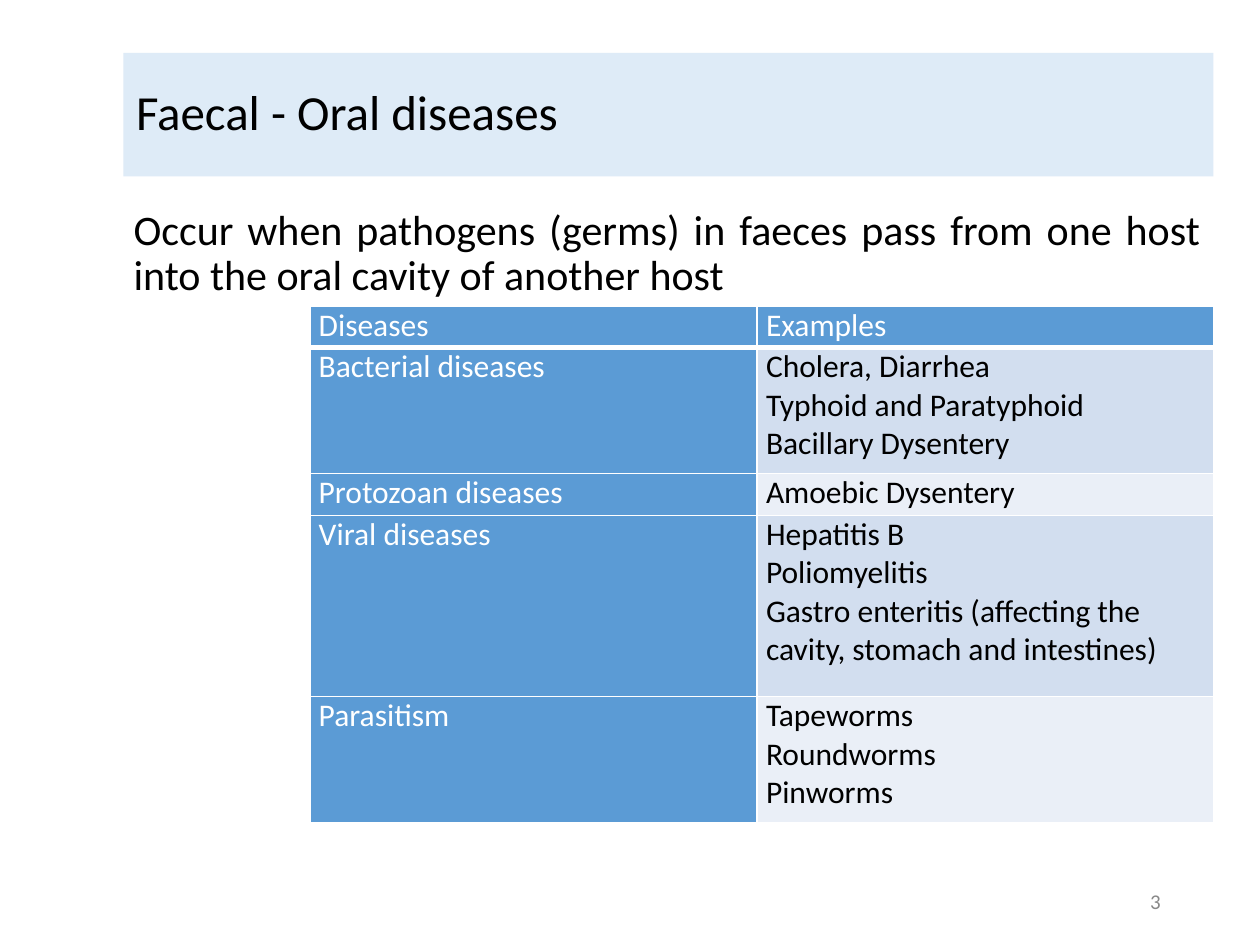
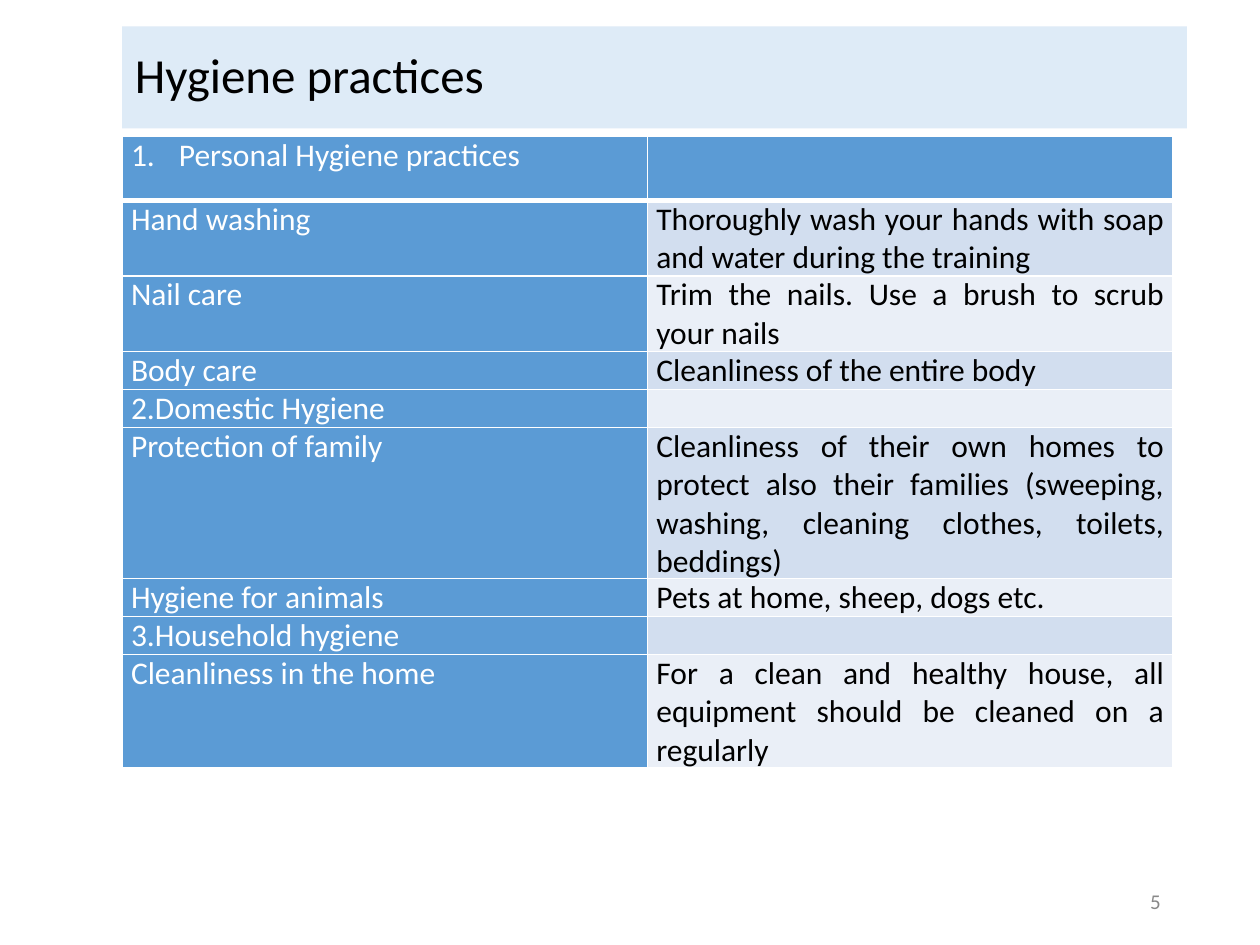
from lxml.etree import SubElement
from pptx import Presentation
from pptx.dml.color import RGBColor
from pptx.enum.text import MSO_ANCHOR, MSO_AUTO_SIZE, PP_ALIGN
from pptx.oxml.ns import qn
from pptx.util import Inches, Pt

BLACK, WHITE, GREY = "000000", "FFFFFF", "898989"
TITLE_BAND, TABLE_BLUE = "DEEBF7", "5B9BD5"
ROW_BANDS = ["EAEFF7", "D2DEEF"]
EDGES = ["a:lnL", "a:lnR", "a:lnT", "a:lnB"]


def color(hex_value):
    return RGBColor.from_string(hex_value)


def write(paragraph, text, size, hex_value, alignment):
    paragraph.alignment = alignment
    run = paragraph.add_run()
    run.text = text
    run.font.name = "Calibri"
    run.font.size = Pt(size)
    run.font.bold = False
    run.font.color.rgb = color(hex_value)


presentation = Presentation()
presentation.slide_width = Inches(10)
presentation.slide_height = Inches(7.5)
title_and_content = presentation.slide_layouts[1]
title_only = presentation.slide_layouts[5]

slides = [
    {
        "layout": title_and_content,
        "title": "Faecal - Oral diseases",
        "title_box": (0.98, 0.42, 8.65, 0.98),
        "intro": "Occur when pathogens (germs) in faeces pass from one host into the oral cavity of another host",
        "number": "3",
        "table_box": (2.46, 2.43, 7.17, 4.1),
        "columns": [3.55, 3.62],
        "alignment": PP_ALIGN.LEFT,
        "rows": [
            (0.33, "Diseases", ["Examples"]),
            (1, "Bacterial diseases", ["Cholera, Diarrhea", "Typhoid and Paratyphoid", "Bacillary Dysentery"]),
            (0.33, "Protozoan diseases", ["Amoebic Dysentery"]),
            (1.44, "Viral diseases", [
                "Hepatitis B",
                "Poliomyelitis",
                "Gastro enteritis (affecting the cavity, stomach and intestines)",
            ]),
            (1, "Parasitism", ["Tapeworms", "Roundworms", "Pinworms"]),
        ],
    },
    {
        "layout": title_only,
        "title": "Hygiene practices",
        "title_box": (0.97, 0.21, 8.45, 0.81),
        "number": "5",
        "table_box": (0.97, 1.08, 8.34, 5.01),
        "columns": [4.17, 4.17],
        "alignment": PP_ALIGN.JUSTIFY,
        "numbered_heading": True,
        "rows": [
            (0.51, "Personal Hygiene practices", []),
            (0.6, "Hand washing", ["Thoroughly wash your hands with soap and water during the training"]),
            (0.6, "Nail care", ["Trim the nails. Use a brush to scrub your nails"]),
            (0.3, "Body care", ["Cleanliness of the entire body"]),
            (0.3, "2.Domestic Hygiene", []),
            (1.2, "Protection of family", [
                "Cleanliness of their own homes to protect also their families "
                "(sweeping, washing, cleaning clothes, toilets, beddings)",
            ]),
            (0.3, "Hygiene for animals", ["Pets at home, sheep, dogs etc."]),
            (0.3, "3.Household hygiene", []),
            (0.9, "Cleanliness in the home", [
                "For a clean and healthy house, all equipment should be cleaned on a regularly",
            ]),
        ],
    },
]

for content in slides:
    slide = presentation.slides.add_slide(content["layout"])

    title = slide.shapes.title
    title.left, title.top, title.width, title.height = map(Inches, content["title_box"])
    title.fill.solid()
    title.fill.fore_color.rgb = color(TITLE_BAND)
    title.text_frame.auto_size = MSO_AUTO_SIZE.NONE
    title.text_frame.vertical_anchor = MSO_ANCHOR.MIDDLE
    paragraph = title.text_frame.paragraphs[0]
    paragraph.line_spacing = 0.9
    write(paragraph, content["title"], 28, BLACK, PP_ALIGN.LEFT)

    number = slide.shapes.add_textbox(Inches(7.06), Inches(6.95), Inches(2.25), Inches(0.4))
    number.text_frame.word_wrap = True
    number.text_frame.vertical_anchor = MSO_ANCHOR.MIDDLE
    write(number.text_frame.paragraphs[0], content["number"], 12, GREY, PP_ALIGN.RIGHT)

    if "intro" in content:
        body = slide.placeholders[1]
        body.left, body.top, body.width, body.height = map(Inches, (0.96, 1.61, 8.67, 4.67))
        body.text_frame.auto_size = MSO_AUTO_SIZE.NONE
        paragraph = body.text_frame.paragraphs[0]
        paragraph.line_spacing = 0.9
        paragraph.space_before = Pt(0)
        properties = paragraph._p.get_or_add_pPr()
        properties.set("marL", "0")
        properties.set("indent", "0")
        SubElement(properties, qn("a:buNone"))
        write(paragraph, content["intro"], 24, BLACK, PP_ALIGN.JUSTIFY)

    rows = content["rows"]
    table = slide.shapes.add_table(len(rows), 2, *map(Inches, content["table_box"])).table
    for column, width in zip(table.columns, content["columns"]):
        column.width = Inches(width)

    for row_index, (height, label, details) in enumerate(rows):
        table.rows[row_index].height = Inches(height)
        for column_index, lines in enumerate([[label], details]):
            cell = table.cell(row_index, column_index)
            cell.margin_left = cell.margin_right = Inches(0.07)
            cell.margin_top = cell.margin_bottom = 0
            heading = row_index == 0 or column_index == 0
            for edge in EDGES:
                width = 3 if row_index == 0 and edge == "a:lnB" else 1
                line = SubElement(cell._tc.get_or_add_tcPr(), qn(edge), w=str(Pt(width)))
                SubElement(SubElement(line, qn("a:solidFill")), qn("a:srgbClr"), val=WHITE)
            cell.fill.solid()
            cell.fill.fore_color.rgb = color(TABLE_BLUE if heading else ROW_BANDS[row_index % 2])
            for line_index, text in enumerate(lines):
                frame = cell.text_frame
                paragraph = frame.add_paragraph() if line_index else frame.paragraphs[0]
                write(paragraph, text, 18, WHITE if heading else BLACK, content["alignment"])
            if not lines:
                cell.text_frame.paragraphs[0].font.size = Pt(18)

    if content.get("numbered_heading"):
        properties = table.cell(0, 0).text_frame.paragraphs[0]._p.get_or_add_pPr()
        properties.set("marL", str(Inches(0.38)))
        properties.set("indent", str(-Inches(0.38)))
        SubElement(properties, qn("a:buFont"), typeface="+mj-lt")
        SubElement(properties, qn("a:buAutoNum"), type="arabicPeriod")

presentation.save("out.pptx")
